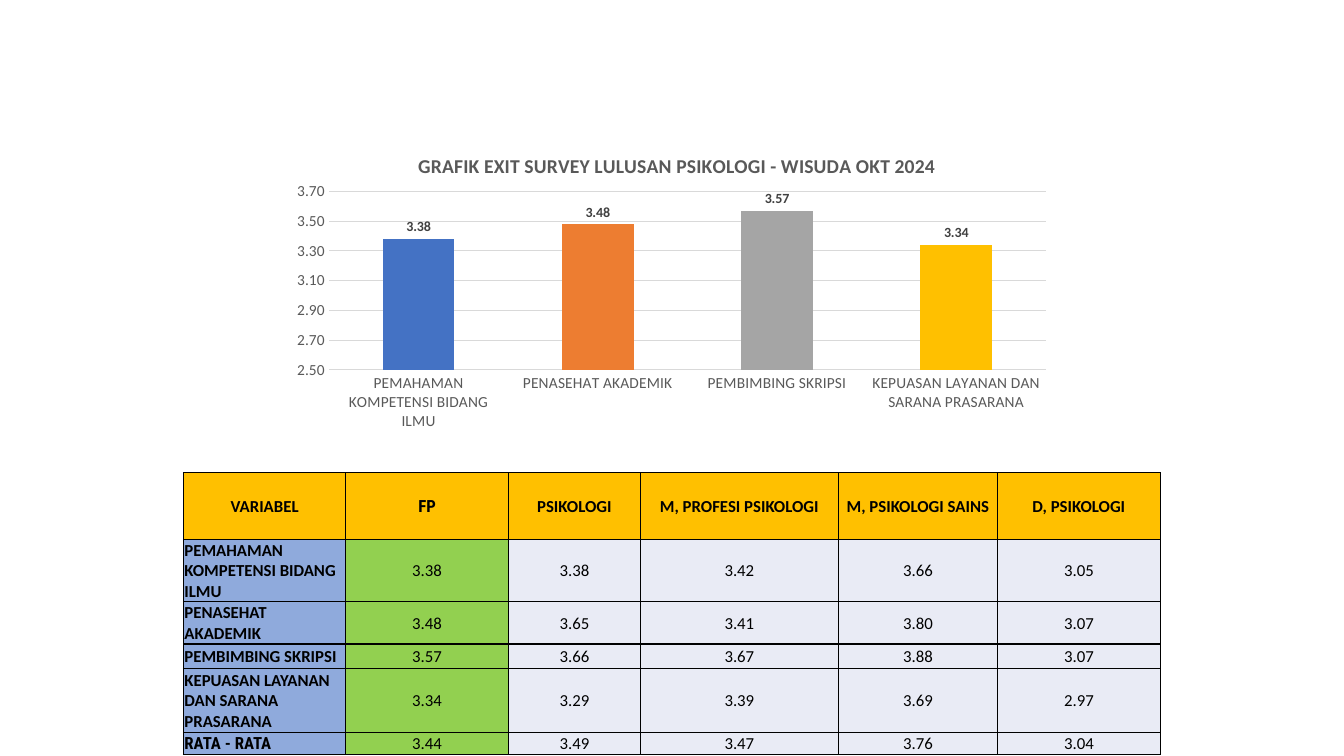
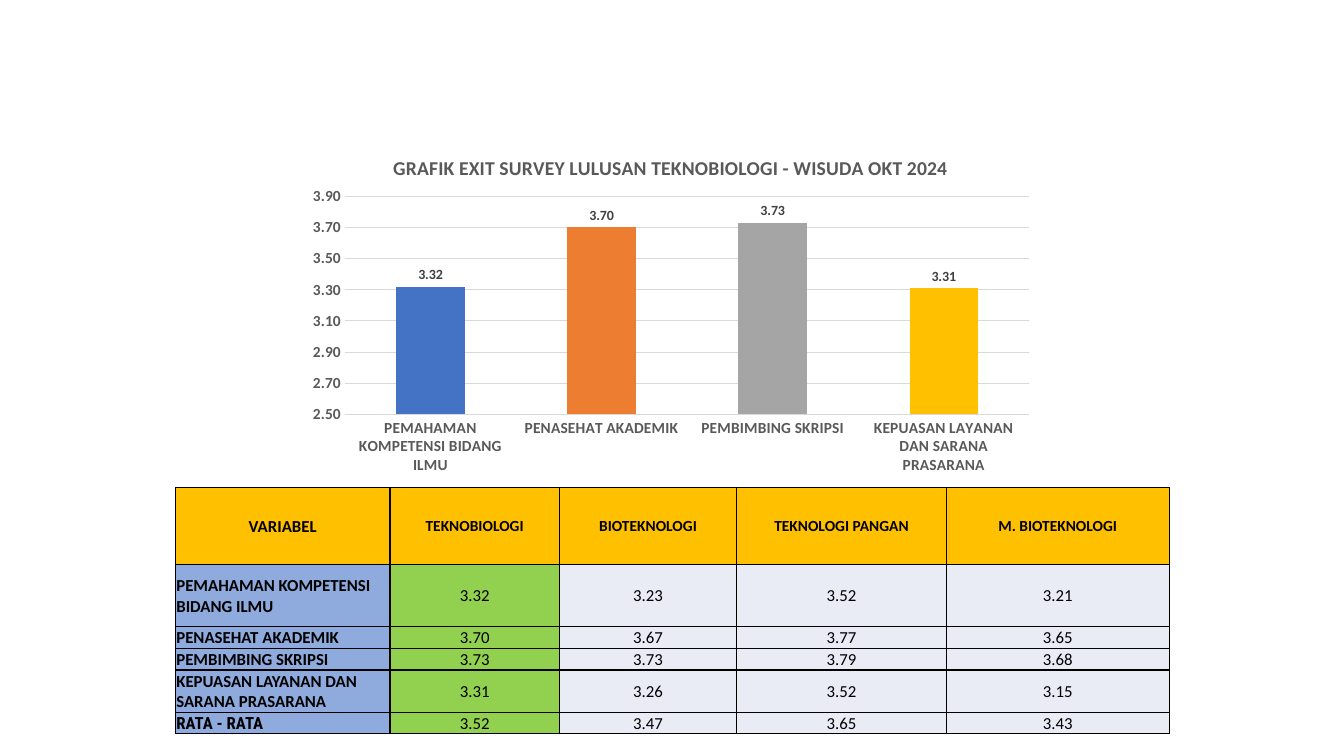
from dataclasses import dataclass

from lxml import etree
from pptx import Presentation
from pptx.chart.chart import Chart
from pptx.chart.data import CategoryChartData
from pptx.dml.color import RGBColor
from pptx.enum.chart import XL_CHART_TYPE, XL_LABEL_POSITION, XL_TICK_MARK
from pptx.enum.text import MSO_ANCHOR, PP_ALIGN
from pptx.oxml import parse_xml
from pptx.oxml.ns import nsdecls, qn
from pptx.slide import Slide
from pptx.table import Table, _Cell
from pptx.text.text import Font
from pptx.util import Emu, Inches, Pt

COLUMN_CLUSTERED = XL_CHART_TYPE.COLUMN_CLUSTERED
OUTSIDE_END = XL_LABEL_POSITION.OUTSIDE_END
NO_TICKS = XL_TICK_MARK.NONE
LEFT, CENTER = PP_ALIGN.LEFT, PP_ALIGN.CENTER
MIDDLE = MSO_ANCHOR.MIDDLE

SLIDE_WIDTH, SLIDE_HEIGHT = Inches(13.33), Inches(7.5)


@dataclass(frozen=True)
class Theme:
    font: str = "Calibri"
    condensed_font: str = "Roboto Condensed"
    text: str = "000000"
    chart_text: str = "595959"
    label_text: str = "404040"
    gridline: str = "D9D9D9"
    border: str = "000000"
    header_fill: str = "FFC000"
    variable_fill: str = "8FAADC"
    faculty_fill: str = "92D050"
    programme_fill: str = "E9EBF5"
    bars: tuple[str, ...] = ("4472C4", "ED7D31", "A5A5A5", "FFC000")
    title_size: int = 14
    table_size: int = 12
    axis_size: int = 11
    label_size: int = 10
    number_format: str = "0.00"


THEME = Theme()
VARIABLES = (
    "PEMAHAMAN KOMPETENSI BIDANG ILMU",
    "PENASEHAT AKADEMIK",
    "PEMBIMBING SKRIPSI",
    "KEPUASAN LAYANAN DAN SARANA PRASARANA",
)
AVERAGE = "RATA - RATA"


@dataclass(frozen=True)
class Box:
    """A place on the slide, in percent of its width and height."""
    left: float
    top: float
    width: float
    height: float

    def lengths(self) -> tuple[Emu, Emu, Emu, Emu]:
        return (
            Emu(int(SLIDE_WIDTH * self.left / 100)),
            Emu(int(SLIDE_HEIGHT * self.top / 100)),
            Emu(int(SLIDE_WIDTH * self.width / 100)),
            Emu(int(SLIDE_HEIGHT * self.height / 100)),
        )


@dataclass(frozen=True)
class ChartPlan:
    """Title and plot places are shares of the chart's size."""
    title: str
    box: Box
    title_place: tuple[float, float]
    plot_place: tuple[float, float, float, float]
    axis_maximum: float
    bold_axes: bool


@dataclass(frozen=True)
class TablePlan:
    """Column and row weights divide the box between them."""
    box: Box
    headers: tuple[str, ...]
    column_weights: tuple[float, ...]
    row_weights: tuple[float, ...]
    header_size: int
    faculty_font: str


@dataclass(frozen=True)
class Survey:
    chart: ChartPlan
    table: TablePlan
    scores: tuple[tuple[float, ...], ...]


SURVEYS = (
    Survey(
        ChartPlan(
            "GRAFIK EXIT SURVEY LULUSAN PSIKOLOGI - WISUDA OKT 2024",
            Box(21, 17.2, 57.98, 40.67),
            (0.17, 0.06), (0.06, 0.2, 0.92, 0.58), 3.7, False,
        ),
        TablePlan(
            Box(13.65, 62.53, 72.68, 37.2),
            ("VARIABEL", "FP", "PSIKOLOGI", "M, PROFESI PSIKOLOGI",
             "M, PSIKOLOGI SAINS", "D, PSIKOLOGI"),
            (1.61, 1.61, 1.31, 1.96, 1.58, 1.61),
            (0.66, 0.62, 0.42, 0.24, 0.64, 0.21),
            12, THEME.condensed_font,
        ),
        (
            (3.38, 3.38, 3.42, 3.66, 3.05),
            (3.48, 3.65, 3.41, 3.80, 3.07),
            (3.57, 3.66, 3.67, 3.88, 3.07),
            (3.34, 3.29, 3.39, 3.69, 2.97),
            (3.44, 3.49, 3.47, 3.76, 3.04),
        ),
    ),
    Survey(
        ChartPlan(
            "GRAFIK EXIT SURVEY LULUSAN TEKNOBIOLOGI - WISUDA OKT 2024",
            Box(22.35, 17.6, 55.35, 46.53),
            (0.12, 0.05), (0.06, 0.18, 0.92, 0.62), 3.9, True,
        ),
        TablePlan(
            Box(13.05, 64.53, 73.95, 32.4),
            ("VARIABEL", "TEKNOBIOLOGI", "BIOTEKNOLOGI",
             "TEKNOLOGI PANGAN", "M. BIOTEKNOLOGI"),
            (2.13, 1.68, 1.76, 2.08, 2.21),
            (0.76, 0.62, 0.21, 0.21, 0.42, 0.21),
            11, THEME.font,
        ),
        (
            (3.32, 3.23, 3.52, 3.21),
            (3.70, 3.67, 3.77, 3.65),
            (3.73, 3.73, 3.79, 3.68),
            (3.31, 3.26, 3.52, 3.15),
            (3.52, 3.47, 3.65, 3.43),
        ),
    ),
)


def style_font(font: Font, size: int, color: str, bold: bool,
               name: str = THEME.font) -> None:
    font.name, font.size, font.bold = name, Pt(size), bold
    font.color.rgb = RGBColor.from_string(color)


def place_chart_part(part: etree._Element, index: int,
                     place: tuple[float, ...]) -> None:
    """Fix a chart part at shares of the chart: x, y and, if given, w, h."""
    for layout in part.findall(qn("c:layout")):
        part.remove(layout)
    keys = ("x", "y", "w", "h")[:len(place)]
    target = '<c:layoutTarget val="inner"/>' if len(place) == 4 else ""
    modes = "".join(f'<c:{key}Mode val="edge"/>' for key in keys[:2])
    shares = "".join(f'<c:{key} val="{share}"/>' for key, share in zip(keys, place))
    part.insert(index, parse_xml(
        f'<c:layout {nsdecls("c")}><c:manualLayout>{target}{modes}{shares}'
        "</c:manualLayout></c:layout>"))


def style_axes(chart: Chart, plan: ChartPlan) -> None:
    for axis in (chart.category_axis, chart.value_axis):
        axis.major_tick_mark = axis.minor_tick_mark = NO_TICKS
        axis.format.line.fill.background()
        style_font(axis.tick_labels.font, THEME.axis_size, THEME.chart_text,
                   plan.bold_axes)
    scale = chart.value_axis
    scale.minimum_scale, scale.maximum_scale = 2.5, plan.axis_maximum
    scale.major_unit = 0.2
    scale.tick_labels.number_format = THEME.number_format
    scale.tick_labels.number_format_is_linked = False
    gridline = scale.major_gridlines.format.line
    gridline.width = Pt(0.75)
    gridline.color.rgb = RGBColor.from_string(THEME.gridline)


def add_survey_chart(slide: Slide, plan: ChartPlan,
                     faculty_scores: tuple[float, ...]) -> None:
    data = CategoryChartData(number_format=THEME.number_format)
    data.categories = VARIABLES
    data.add_series("Series 1", faculty_scores)
    chart = slide.shapes.add_chart(COLUMN_CLUSTERED, *plan.box.lengths(), data).chart
    style_font(chart.font, THEME.label_size, THEME.text, False)
    chart.has_legend = False

    chart.has_title = True
    chart.chart_title.include_in_layout = False
    paragraph = chart.chart_title.text_frame.paragraphs[0]
    paragraph.text = plan.title
    style_font(paragraph.runs[0].font, THEME.title_size, THEME.chart_text, True)
    style_axes(chart, plan)

    plot = chart.plots[0]
    plot.gap_width = 150
    plot.vary_by_categories = False
    for index, color in enumerate(THEME.bars):
        fill = plot.series[0].points[index].format.fill
        fill.solid()
        fill.fore_color.rgb = RGBColor.from_string(color)
    plot.has_data_labels = True
    labels = plot.data_labels
    labels.show_value = True
    labels.position = OUTSIDE_END
    labels.number_format = THEME.number_format
    labels.number_format_is_linked = False
    style_font(labels.font, THEME.label_size, THEME.label_text, True)

    place_chart_part(chart.element.find(".//" + qn("c:title")), 1, plan.title_place)
    place_chart_part(chart.element.find(".//" + qn("c:plotArea")), 0, plan.plot_place)


def fill_cell(cell: _Cell, text: str, fill: str, bold: bool,
              size: int = THEME.table_size, font: str = THEME.font,
              alignment: PP_ALIGN = CENTER) -> None:
    cell.fill.solid()
    cell.fill.fore_color.rgb = RGBColor.from_string(fill)
    cell.vertical_anchor = MIDDLE
    cell.margin_left = cell.margin_right = cell.margin_top = Inches(0.01)
    cell.margin_bottom = 0
    paragraph = cell.text_frame.paragraphs[0]
    paragraph.text = text
    paragraph.alignment = alignment
    style_font(paragraph.font, size, THEME.text, bold, font)


def add_borders(table_element: etree._Element) -> None:
    for properties in table_element.iter(qn("a:tcPr")):
        for index, side in enumerate(("lnL", "lnR", "lnT", "lnB")):
            properties.insert(index, parse_xml(
                f'<a:{side} {nsdecls("a")} w="{Pt(1)}"><a:solidFill>'
                f'<a:srgbClr val="{THEME.border}"/></a:solidFill></a:{side}>'))


def divide_table(table: Table, plan: TablePlan) -> None:
    _, _, width, height = plan.box.lengths()
    for column, weight in zip(table.columns, plan.column_weights):
        column.width = Emu(int(width * weight / sum(plan.column_weights)))
    for row, weight in zip(table.rows, plan.row_weights):
        row.height = Emu(int(height * weight / sum(plan.row_weights)))


def add_survey_table(slide: Slide, plan: TablePlan,
                     scores: tuple[tuple[float, ...], ...]) -> None:
    frame = slide.shapes.add_table(
        len(plan.row_weights), len(plan.column_weights), *plan.box.lengths())
    table = frame.table
    table.first_row = table.horz_banding = False
    divide_table(table, plan)

    for column, header in enumerate(plan.headers):
        fill_cell(table.cell(0, column), header, THEME.header_fill, True,
                  size=plan.header_size if column else THEME.table_size,
                  font=plan.faculty_font if column == 1 else THEME.font)
    for row, (name, values) in enumerate(zip((*VARIABLES, AVERAGE), scores), start=1):
        fill_cell(table.cell(row, 0), name, THEME.variable_fill, True,
                  font=THEME.condensed_font if name == AVERAGE else THEME.font,
                  alignment=LEFT)
        for column, value in enumerate(values, start=1):
            fill = THEME.faculty_fill if column == 1 else THEME.programme_fill
            fill_cell(table.cell(row, column), f"{value:.2f}", fill, False)
    add_borders(frame.element)


def main() -> None:
    presentation = Presentation()
    presentation.slide_width, presentation.slide_height = SLIDE_WIDTH, SLIDE_HEIGHT
    blank_layout = presentation.slide_layouts[6]
    for survey in SURVEYS:
        slide = presentation.slides.add_slide(blank_layout)
        faculty_scores = tuple(row[0] for row in survey.scores[:len(VARIABLES)])
        add_survey_chart(slide, survey.chart, faculty_scores)
        add_survey_table(slide, survey.table, survey.scores)
    presentation.save("out.pptx")


if __name__ == "__main__":
    main()
